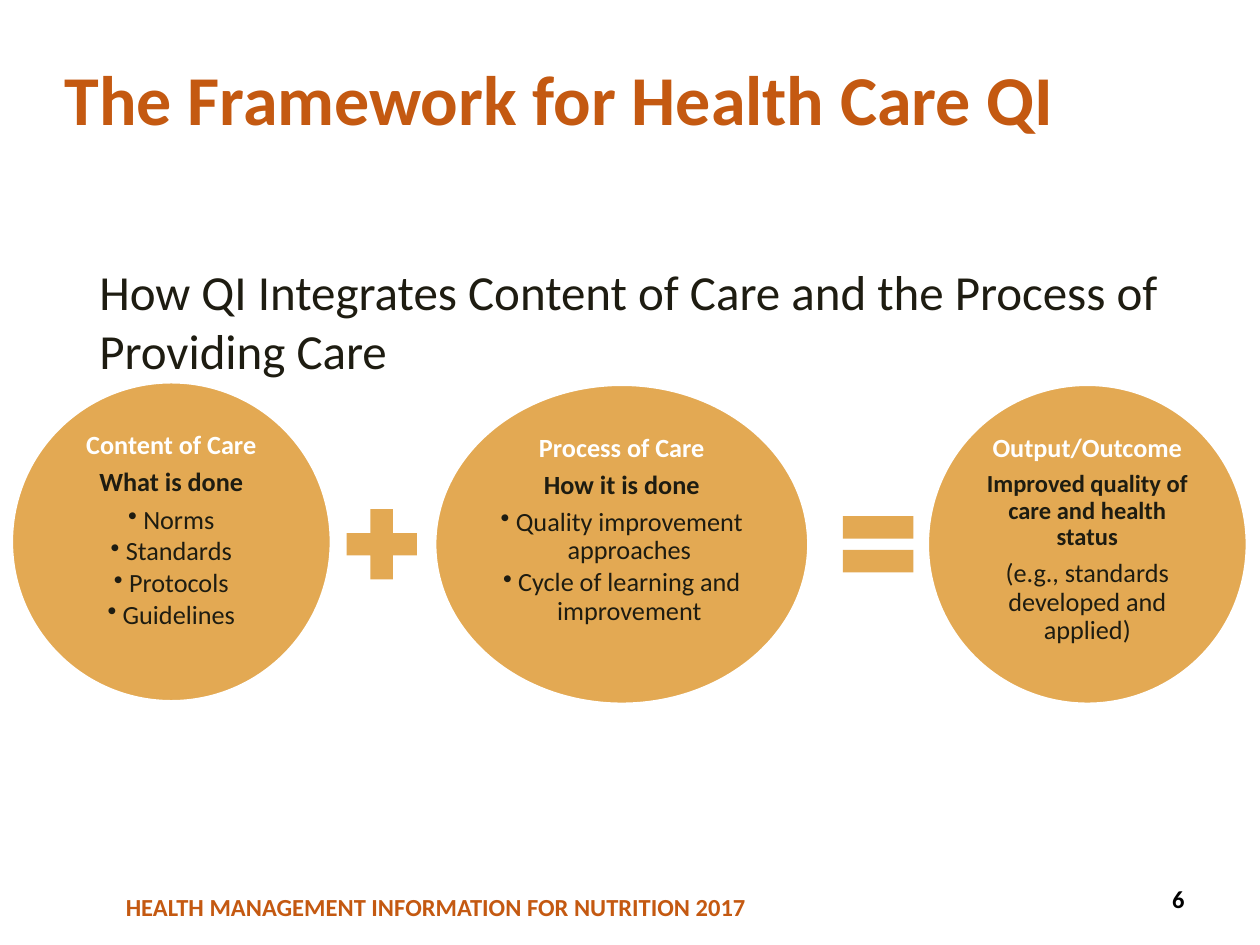
from dataclasses import dataclass
from lxml import etree
from pptx import Presentation
from pptx.dml.color import RGBColor
from pptx.enum.shapes import MSO_SHAPE
from pptx.enum.text import MSO_ANCHOR, PP_ALIGN
from pptx.oxml.ns import qn
from pptx.util import Inches, Pt

OVAL, RECT = MSO_SHAPE.OVAL, MSO_SHAPE.RECTANGLE
PLUS, EQUAL = MSO_SHAPE.MATH_PLUS, MSO_SHAPE.MATH_EQUAL
TOP, MIDDLE = MSO_ANCHOR.TOP, MSO_ANCHOR.MIDDLE
LEFT, CENTER, RIGHT = PP_ALIGN.LEFT, PP_ALIGN.CENTER, PP_ALIGN.RIGHT


@dataclass(frozen=True)
class Theme:
    font: str = "Calibri"
    rust: RGBColor = RGBColor(0xC4, 0x59, 0x11)
    gold: RGBColor = RGBColor(0xE3, 0xA9, 0x53)
    ink: RGBColor = RGBColor(0x1E, 0x1C, 0x11)
    white: RGBColor = RGBColor(0xFF, 0xFF, 0xFF)
    black: RGBColor = RGBColor(0, 0, 0)
    title: int = 40
    lead: int = 28
    body: int = 15
    small: int = 14


THEME = Theme()

CIRCLES = [
    ((0.09, 3.03, 2.54, 2.54), 1.8, [
        ("Content of Care", "head"), ("What is done", "sub"),
        ("Norms", "item"), ("Standards", "item"),
        ("Protocols", "item"), ("Guidelines", "item")]),
    ((3.45, 3.05, 2.97, 2.54), 2.1, [
        ("Process of Care", "head"), ("How it is done", "sub"),
        ("Quality improvement approaches", "item"),
        ("Cycle of learning and improvement", "item")]),
    ((7.36, 3.05, 2.54, 2.54), 1.8, [
        ("Output/Outcome", "head"),
        ("Improved quality of care and health status", "tight"),
        ("(e.g., standards developed and applied)", "note")]),
]

STYLES = {
    "head": (THEME.body, THEME.white, True),
    "sub": (THEME.body, THEME.ink, True),
    "tight": (THEME.small, THEME.ink, True),
    "note": (THEME.body, THEME.ink, False),
    "item": (THEME.body, THEME.ink, False),
}


def style(para, size, color, bold):
    for run in para.runs:
        font = run.font
        font.name, font.size, font.bold = THEME.font, Pt(size), bold
        font.color.rgb = color


def add_form(slide, kind, box, fill):
    form = slide.shapes.add_shape(kind, *map(Inches, box))
    form.shadow.inherit = False
    form.fill.solid()
    form.fill.fore_color.rgb = fill
    form.line.fill.background()
    return form


def add_frame(slide, box, anchor=TOP):
    frame = slide.shapes.add_textbox(*map(Inches, box)).text_frame
    frame.word_wrap = True
    frame.vertical_anchor = anchor
    return frame


def add_line(slide, box, text, look, align=LEFT, anchor=MIDDLE):
    frame = add_frame(slide, box, anchor)
    frame.text = text
    para = frame.paragraphs[0]
    para.alignment = align
    style(para, *look)


def add_bullet(para):
    props = para._p.get_or_add_pPr()
    props.set("marL", str(Inches(0.12)))
    props.set("indent", str(-Inches(0.12)))
    etree.SubElement(props, qn("a:buChar")).set("char", "•")


def add_circle(slide, box, span, lines):
    left, top, width, height = box
    oval = add_form(slide, OVAL, box, THEME.gold)
    oval.line.color.rgb = THEME.white
    oval.line.width = Pt(2)
    frame = add_frame(slide, (left + (width - span) / 2, top + 0.38, span, 1.79))
    frame.margin_left = frame.margin_right = Inches(0.02)
    frame.margin_top = frame.margin_bottom = Inches(0.02)
    frame.text = "\n".join(text for text, _ in lines)
    for para, (_, role) in zip(frame.paragraphs, lines):
        if role == "item":
            add_bullet(para)
        para.alignment = CENTER
        para.line_spacing = 0.9
        para.space_after = Pt(2 if role == "item" else 5)
        style(para, *STYLES[role])


def add_flow(slide):
    for box, span, lines in CIRCLES:
        add_circle(slide, box, span, lines)
    for kind, left in ((PLUS, 2.65), (EQUAL, 6.59)):
        add_form(slide, kind, (left, 3.94, 0.76, 0.76), THEME.gold)


def add_header(slide):
    add_line(slide, (0.04, 0.15, 8.8, 1.25), "The Framework for Health Care QI",
             (THEME.title, THEME.rust, True), CENTER)
    add_line(slide, (0.69, 2.03, 8.62, 1.06),
             "How QI Integrates Content of Care and the Process of Providing Care",
             (THEME.lead, THEME.ink, False), anchor=TOP)


def add_footer(slide):
    add_line(slide, (0.9, 6.95, 6.2, 0.5),
             "HEALTH MANAGEMENT INFORMATION FOR NUTRITION 2017",
             (THEME.small, THEME.rust, True))
    page = add_form(slide, RECT, (7.17, 6.93, 2.33, 0.4), THEME.white)
    page.text_frame.text = "6"
    para = page.text_frame.paragraphs[0]
    para.alignment = RIGHT
    style(para, THEME.small, THEME.black, True)


def main():
    deck = Presentation()
    deck.slide_width, deck.slide_height = Inches(10), Inches(7.5)
    slide = deck.slides.add_slide(deck.slide_layouts[6])
    add_header(slide)
    add_flow(slide)
    add_footer(slide)
    deck.save("out.pptx")


if __name__ == "__main__":
    main()
